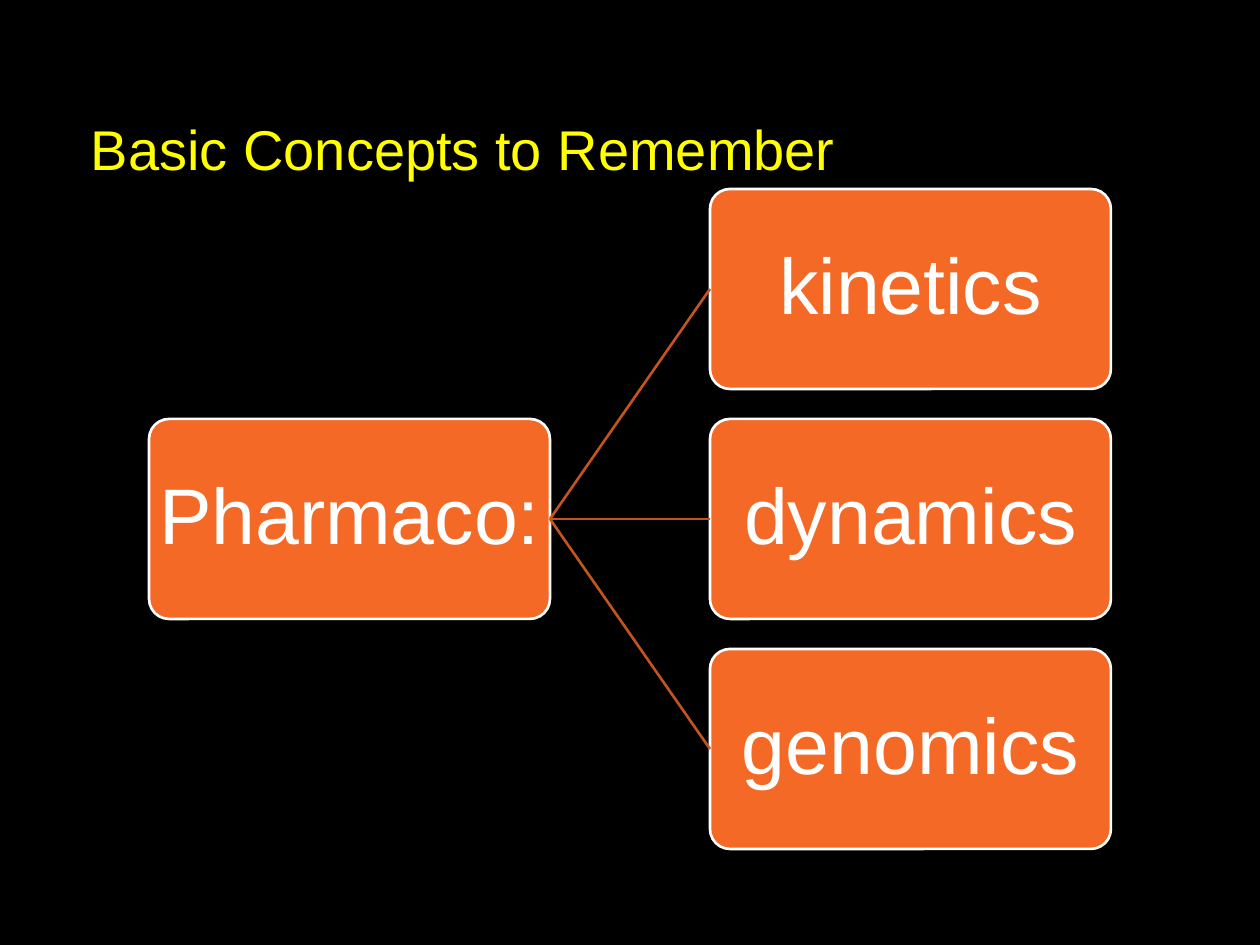
import pptx
import pptx.dml.color
import pptx.enum.shapes
import pptx.enum.text
import pptx.oxml.ns
import pptx.util
from lxml import etree

PX = 914400 // 126
BOX_W, BOX_H = 401, 200
ROOT_X, BRANCH_X = 149, 710
TOP, STEP = 189, 230


def color(value):
    return pptx.dml.color.RGBColor.from_string(value)


def write(sp, text, size, hex_color, align, anchor, margins):
    """Fill a shape with one run; margins are (sides, top and bottom) in px."""
    tf = sp.text_frame
    tf.word_wrap = True
    tf.vertical_anchor = anchor
    tf.margin_left = tf.margin_right = margins[0] * PX
    tf.margin_top = tf.margin_bottom = margins[1] * PX
    p = tf.paragraphs[0]
    p.alignment = align
    p.line_spacing = 0.9
    r = p.add_run()
    r.text = text
    r.font.name = "Arial"
    r.font.size = pptx.util.Pt(size)
    r.font.color.rgb = color(hex_color)


prs = pptx.Presentation()
prs.slide_width = pptx.util.Inches(10)
prs.slide_height = pptx.util.Inches(7.5)
s = prs.slides.add_slide(prs.slide_layouts[6])
s.background.fill.solid()
s.background.fill.fore_color.rgb = color("000000")

ALIGN = pptx.enum.text.PP_ALIGN
ANCHOR = pptx.enum.text.MSO_ANCHOR

title = s.shapes.add_textbox(91 * PX, 0, 1079 * PX, 189 * PX)
write(title, "Basic Concepts to Remember", 32, "FFFF00",
      ALIGN.LEFT, ANCHOR.BOTTOM, (0, 6))

# The root sits level with the middle branch.
nodes = [("Pharmaco:", ROOT_X, TOP + STEP)]
for i, name in enumerate(["kinetics", "dynamics", "genomics"]):
    nodes.append((name, BRANCH_X, TOP + i * STEP))

boxes = []
for name, x, y in nodes:
    sp = s.shapes.add_shape(pptx.enum.shapes.MSO_SHAPE.ROUNDED_RECTANGLE,
                            x * PX, y * PX, BOX_W * PX, BOX_H * PX)
    sp.adjustments[0] = 0.1
    sp.shadow.inherit = False
    sp.fill.solid()
    sp.fill.fore_color.rgb = color("F36925")
    sp.line.color.rgb = color("FFFFFF")
    sp.line.width = pptx.util.Pt(1.5)
    write(sp, name, 45, "FFFFFF", ALIGN.CENTER, ANCHOR.MIDDLE, (3, 3))
    boxes.append(sp)

root, *branches = boxes
for branch in branches:
    line = s.shapes.add_connector(pptx.enum.shapes.MSO_CONNECTOR.STRAIGHT, 0, 0, 0, 0)
    line.begin_connect(root, 3)
    line.end_connect(branch, 1)
    line.line.color.rgb = color("C3541E")
    line.line.width = pptx.util.Pt(1.5)
    etree.SubElement(line._element.spPr, pptx.oxml.ns.qn("a:effectLst"))

prs.save("out.pptx")
